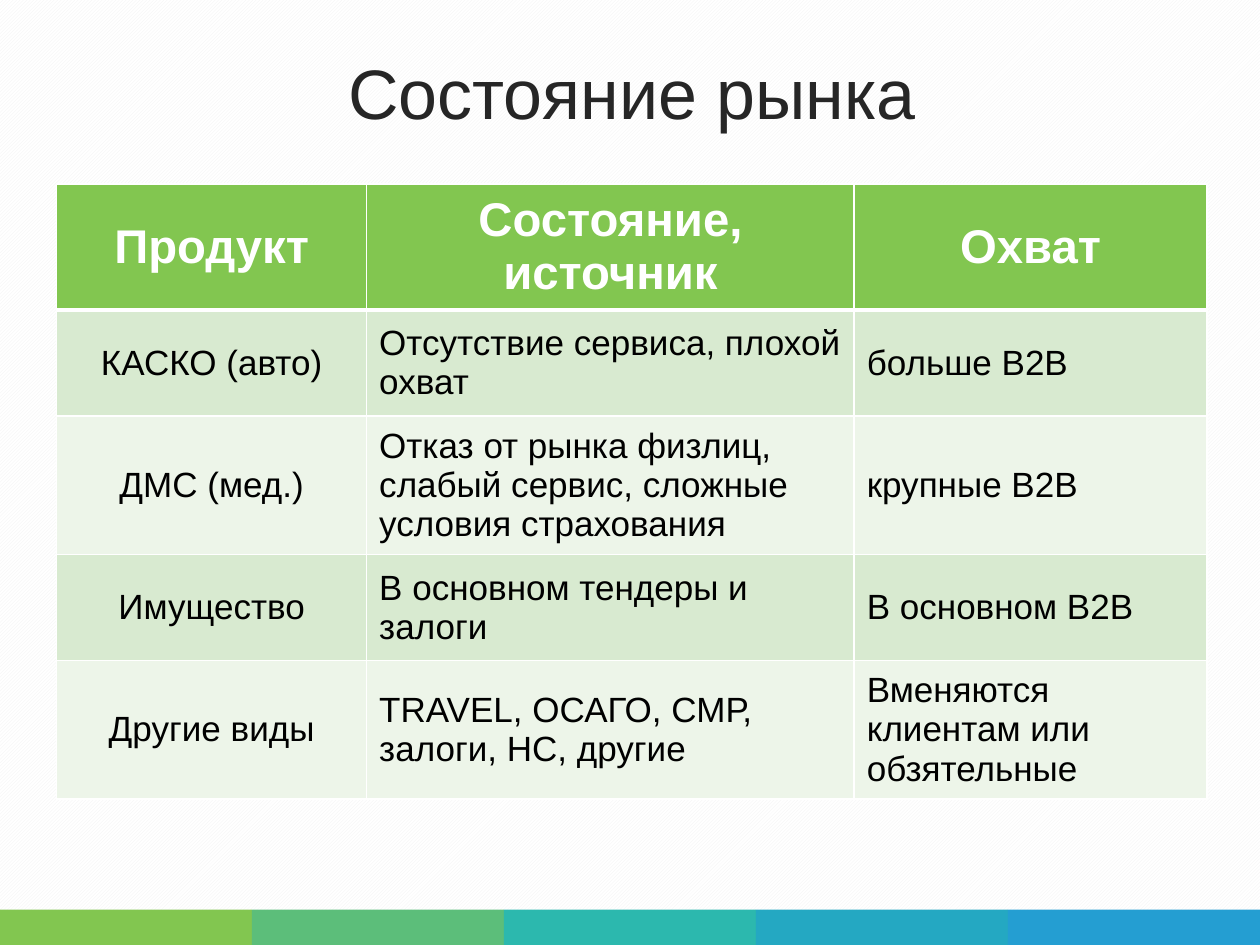
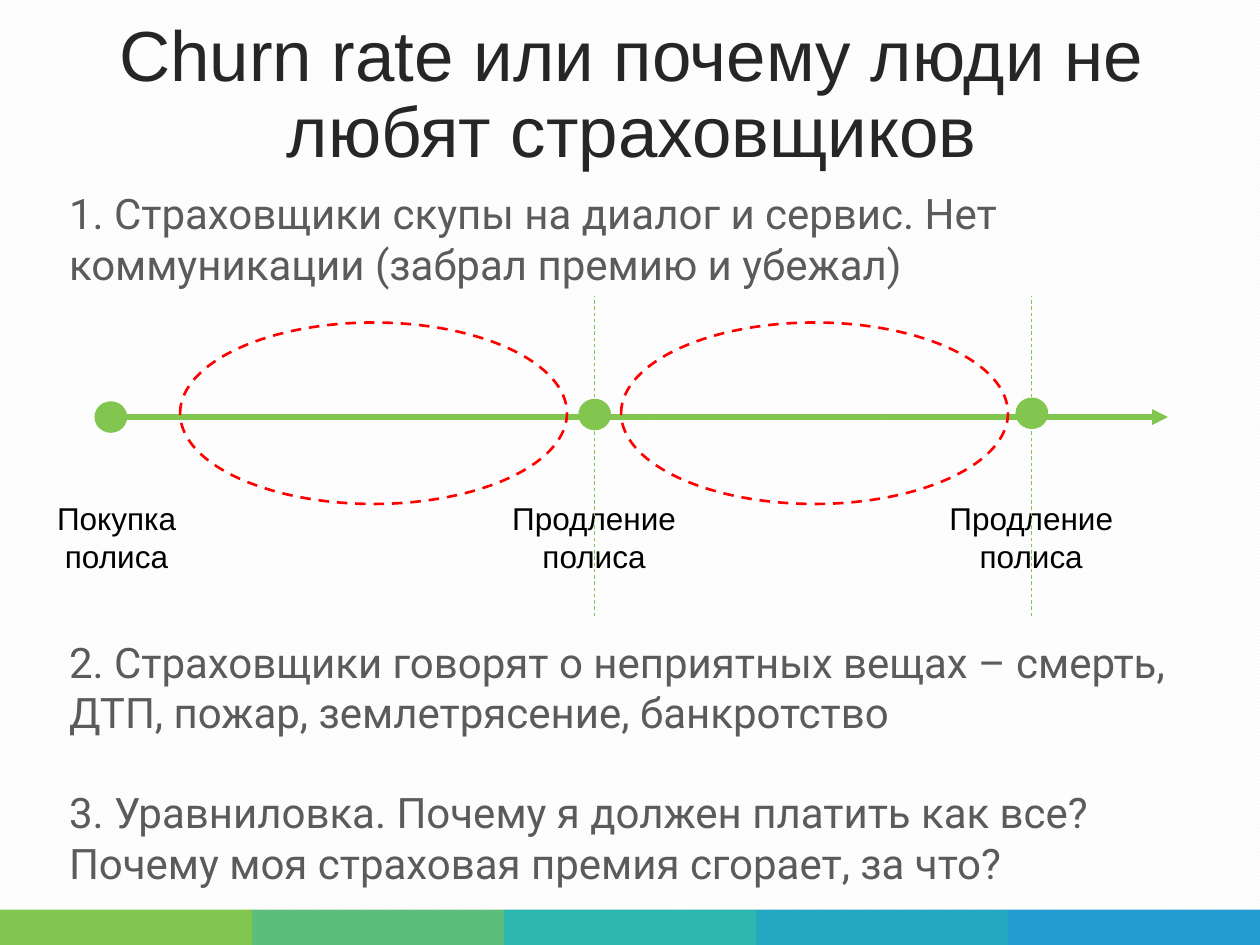
from dataclasses import dataclass

from lxml import etree
from pptx import Presentation
from pptx.dml.color import RGBColor
from pptx.enum.dml import MSO_LINE, MSO_PATTERN
from pptx.enum.shapes import MSO_CONNECTOR, MSO_SHAPE
from pptx.enum.text import MSO_ANCHOR, PP_ALIGN
from pptx.oxml.ns import qn
from pptx.util import Inches, Pt

LEFT, CENTER = PP_ALIGN.LEFT, PP_ALIGN.CENTER
TOP, MIDDLE = MSO_ANCHOR.TOP, MSO_ANCHOR.MIDDLE
OVAL, RECTANGLE = MSO_SHAPE.OVAL, MSO_SHAPE.RECTANGLE
STRAIGHT = MSO_CONNECTOR.STRAIGHT
DASH = MSO_LINE.DASH
HATCH = MSO_PATTERN.LIGHT_UPWARD_DIAGONAL


@dataclass(frozen=True)
class Theme:
    font: str = "Arial"
    reason_font: str = "Roboto"
    green: str = "82C650"
    bands: tuple = ("82C650", "5CBE7A", "2CB8AE", "24A8C2", "249ED2")
    rows: tuple = ("D8EAD0", "EDF5E9")
    white: str = "FFFFFF"
    hatch: str = "F2F2F2"
    black: str = "000000"
    title: str = "262626"
    reason: str = "5B5B5B"
    red: str = "FF0000"
    header_size: float = 27
    cell_size: float = 20
    reason_size: float = 24
    label_size: float = 18


THEME = Theme()
SLIDE_WIDTH, SLIDE_HEIGHT = 10, 7.5
BAND_HEIGHT = 0.28

MARKET_TITLE = ("Состояние рынка", 40)
MARKET = [
    ("Продукт", "Состояние, источник", "Охват"),
    ("КАСКО (авто)", "Отсутствие сервиса, плохой охват", "больше B2B"),
    ("ДМС (мед.)", "Отказ от рынка физлиц, слабый сервис, сложные условия страхования",
     "крупные B2B"),
    ("Имущество", "В основном тендеры и залоги", "В основном B2B"),
    ("Другие виды", "TRAVEL, ОСАГО, СМР, залоги, НС, другие",
     "Вменяются клиентам или обзятельные"),
]
MARKET_WIDTHS = (2.46, 3.87, 2.8)
MARKET_HEIGHTS = (0.94, 0.84, 1.03, 0.84, 1.03)

CHURN_TITLE = ("Churn rate или почему люди не любят страховщиков", 40.5)
REASONS = [
    (1.44, 0.91, ["1. Страховщики скупы на диалог и сервис. Нет коммуникации (забрал премию и убежал)"]),
    (5, 2.12, ["2. Страховщики говорят о неприятных вещах – смерть, ДТП, пожар, землетрясение, банкротство",
               "3. Уравниловка. Почему я должен платить как все? Почему моя страховая премия сгорает, за что?"]),
]
EVENTS = [
    ("Покупка полиса", 0.88, 3.31, 0.27, 1.31),
    ("Продление полиса", 4.72, 3.29, 3.88, 1.67),
    ("Продление полиса", 8.19, 3.28, 7.35, 1.67),
]
SILENCES = (1.43, 4.93)


def rgb(value):
    return RGBColor.from_string(value)


def box(left, top, width, height):
    return [Inches(value) for value in (left, top, width, height)]


def write(frame, texts, size, color, font=THEME.font, align=LEFT, bold=False, gap=0):
    frame.text = "\n".join(texts)
    frame.word_wrap = True
    for number, paragraph in enumerate(frame.paragraphs):
        paragraph.alignment = align
        if number and gap:
            paragraph.space_before = Pt(gap)
        for run in paragraph.runs:
            run.font.name = font
            run.font.size = Pt(size)
            run.font.bold = bold
            run.font.color.rgb = rgb(color)


def add_text(slide, place, texts, size, color, anchor=TOP, **style):
    frame = slide.shapes.add_textbox(*box(*place)).text_frame
    write(frame, texts, size, color, **style)
    frame.vertical_anchor = anchor
    return frame


def add_figure(slide, kind, place, fill=None, outline=None):
    figure = slide.shapes.add_shape(kind, *box(*place))
    figure.shadow.inherit = False
    if fill:
        figure.fill.solid()
        figure.fill.fore_color.rgb = rgb(fill)
    else:
        figure.fill.background()
    if outline:
        figure.line.color.rgb = rgb(outline)
        figure.line.width = Pt(1.5)
        figure.line.dash_style = DASH
    else:
        figure.line.fill.background()


def add_line(slide, start, end, width, dash=None, arrow=False):
    line = slide.shapes.add_connector(STRAIGHT, *box(*start, *end))
    line.line.color.rgb = rgb(THEME.green)
    line.line.width = Pt(width)
    if dash:
        line.line.dash_style = dash
    if arrow:
        etree.SubElement(line.line._get_or_add_ln(), qn("a:tailEnd"), type="triangle")
    etree.SubElement(line._element.spPr, qn("a:effectLst"))


def add_slide(prs, title, size):
    slide = prs.slides.add_slide(prs.slide_layouts[6])
    backdrop = slide.background.fill
    backdrop.patterned()
    backdrop.pattern = HATCH
    backdrop.fore_color.rgb = rgb(THEME.hatch)
    backdrop.back_color.rgb = rgb(THEME.white)
    band_width = SLIDE_WIDTH / len(THEME.bands)
    for number, color in enumerate(THEME.bands):
        place = (number * band_width, SLIDE_HEIGHT - BAND_HEIGHT, band_width, BAND_HEIGHT)
        add_figure(slide, RECTANGLE, place, fill=color)
    heading = add_text(slide, (0.27, 0.37, 9.49, 0.79), [title], size, THEME.title,
                       anchor=MIDDLE, align=CENTER).paragraphs[0]
    heading.line_spacing = 0.9
    heading.space_before = Pt(7.5)
    return slide


def add_borders(cell, top, bottom):
    properties = cell._tc.get_or_add_tcPr()
    for side, width in (("L", 1), ("R", 1), ("T", top), ("B", bottom)):
        border = etree.SubElement(properties, qn(f"a:ln{side}"), w=str(Pt(width)))
        fill = etree.SubElement(border, qn("a:solidFill"))
        etree.SubElement(fill, qn("a:srgbClr"), val=THEME.white)


def build_market(prs):
    slide = add_slide(prs, *MARKET_TITLE)
    place = box(0.45, 1.46, sum(MARKET_WIDTHS), sum(MARKET_HEIGHTS))
    table = slide.shapes.add_table(len(MARKET), len(MARKET_WIDTHS), *place).table
    for column, width in zip(table.columns, MARKET_WIDTHS):
        column.width = Inches(width)
    for row, height in zip(table.rows, MARKET_HEIGHTS):
        row.height = Inches(height)
    for r, texts in enumerate(MARKET):
        header = r == 0
        for c, text in enumerate(texts):
            cell = table.cell(r, c)
            write(cell.text_frame, [text],
                  THEME.header_size if header else THEME.cell_size,
                  THEME.white if header else THEME.black,
                  align=CENTER if header or c == 0 else LEFT, bold=header)
            cell.vertical_anchor = MIDDLE
            add_borders(cell, top=3 if r == 1 else 1, bottom=3 if header else 1)
            cell.fill.solid()
            cell.fill.fore_color.rgb = rgb(THEME.green if header else THEME.rows[(r - 1) % 2])


def build_churn(prs):
    slide = add_slide(prs, *CHURN_TITLE)
    for top, height, texts in REASONS:
        add_text(slide, (0.45, top, 9.3, height), texts, THEME.reason_size, THEME.reason,
                 font=THEME.reason_font, gap=28.5)
    add_line(slide, (0.75, 3.31), (9.27, 3.31), 3, arrow=True)
    for label, _, _, left, width in EVENTS:
        add_text(slide, (left, 3.91, width, 0.71), [label], THEME.label_size, THEME.black,
                 align=CENTER)
    for _, x, _, _, _ in EVENTS[1:]:
        add_line(slide, (x, 4.89), (x, 2.35), 0.5, dash=DASH)
    for left in SILENCES:
        add_figure(slide, OVAL, (left, 2.56, 3.07, 1.44), outline=THEME.red)
    for _, x, y, _, _ in EVENTS:
        add_figure(slide, OVAL, (x - 0.13, y - 0.125, 0.26, 0.25), fill=THEME.green)


def main():
    prs = Presentation()
    prs.slide_width = Inches(SLIDE_WIDTH)
    prs.slide_height = Inches(SLIDE_HEIGHT)
    build_market(prs)
    build_churn(prs)
    prs.save("out.pptx")


if __name__ == "__main__":
    main()
